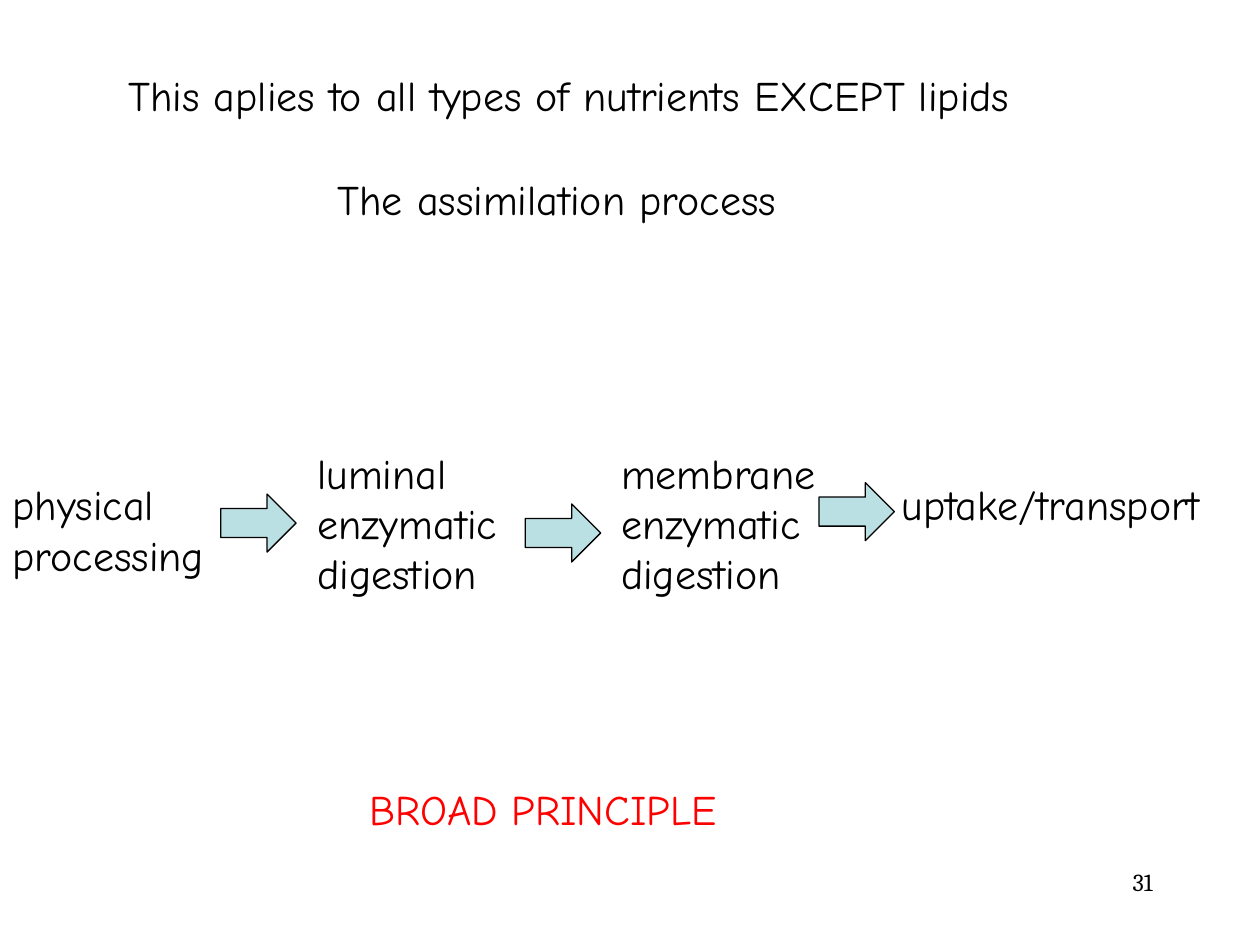
from dataclasses import dataclass

from pptx import Presentation
from pptx.dml.color import RGBColor
from pptx.enum.shapes import MSO_SHAPE
from pptx.enum.text import MSO_ANCHOR, MSO_AUTO_SIZE, PP_ALIGN
from pptx.util import Cm, Pt


@dataclass(frozen=True)
class Theme:
    ink: RGBColor = RGBColor(0x00, 0x00, 0x00)
    accent: RGBColor = RGBColor(0xFF, 0x00, 0x00)
    arrow: RGBColor = RGBColor(0xBB, 0xE0, 0xE3)
    text_font: str = "Comic Neue"
    number_font: str = "Cambria"
    text_size: Pt = Pt(24)
    number_size: Pt = Pt(14)
    outline: Pt = Pt(0.75)


class SlideBuilder:
    """Holds the theme and the slide being built; lengths are in centimetres."""

    def __init__(self, theme, slide):
        self.theme = theme
        self.slide = slide

    def fill_text(self, sp, lines, color=None, font=None, size=None,
                  align=PP_ALIGN.LEFT, wrap=False):
        tf = sp.text_frame
        tf.word_wrap = wrap
        tf.auto_size = MSO_AUTO_SIZE.NONE if wrap else MSO_AUTO_SIZE.SHAPE_TO_FIT_TEXT
        tf.vertical_anchor = MSO_ANCHOR.TOP
        for i, line in enumerate(lines):
            p = tf.add_paragraph() if i else tf.paragraphs[0]
            p.alignment = align
            r = p.add_run()
            r.text = line
            r.font.name = font or self.theme.text_font
            r.font.size = size or self.theme.text_size
            r.font.color.rgb = color or self.theme.ink

    def title(self, text, left, top, width, height):
        sp = self.slide.shapes.title
        sp.left, sp.top, sp.width, sp.height = map(Cm, (left, top, width, height))
        self.fill_text(sp, [text])

    def text(self, lines, left, top, width, height, **style):
        sp = self.slide.shapes.add_textbox(*map(Cm, (left, top, width, height)))
        self.fill_text(sp, lines, **style)

    def arrow(self, left, top, width=1.52, height=1.17):
        sp = self.slide.shapes.add_shape(
            MSO_SHAPE.RIGHT_ARROW, *map(Cm, (left, top, width, height)))
        sp.shadow.inherit = False
        sp.fill.solid()
        sp.fill.fore_color.rgb = self.theme.arrow
        sp.line.color.rgb = self.theme.ink
        sp.line.width = self.theme.outline

    def number(self, text, left, top, width, height):
        self.text([text], left, top, width, height, font=self.theme.number_font,
                  size=self.theme.number_size, align=PP_ALIGN.RIGHT, wrap=True)


STAGES = [
    (["physical", "processing"], 0, 9.53, 4.72, 2.31),
    (["luminal", "enzymatic", "digestion"], 6.15, 8.89, 4.52, 3.33),
    (["membrane", "enzymatic", "digestion"], 12.27, 8.89, 4.57, 3.33),
    (["uptake/transport"], 17.93, 9.53, 7.47, 1.27),
]
ARROWS = [(4.45, 9.96), (10.59, 10.16), (16.51, 9.73)]


def main():
    prs = Presentation()
    prs.slide_width, prs.slide_height = Cm(25.4), Cm(19.05)
    theme = Theme()
    s = SlideBuilder(theme, prs.slides.add_slide(prs.slide_layouts.get_by_name("Title Only")))

    s.text(["This aplies to all types of nutrients EXCEPT lipids"], 2.34, 1.27, 20.37, 1.27)
    s.title("The assimilation process", 6.55, 3.38, 10.52, 1.27)
    for stage in STAGES:
        s.text(*stage)
    for position in ARROWS:
        s.arrow(*position)
    s.text(["BROAD PRINCIPLE"], 7.19, 15.67, 8.36, 1.3, color=theme.accent)
    s.number("31", 18.21, 17.35, 5.28, 1.27)

    prs.save("out.pptx")


if __name__ == "__main__":
    main()
